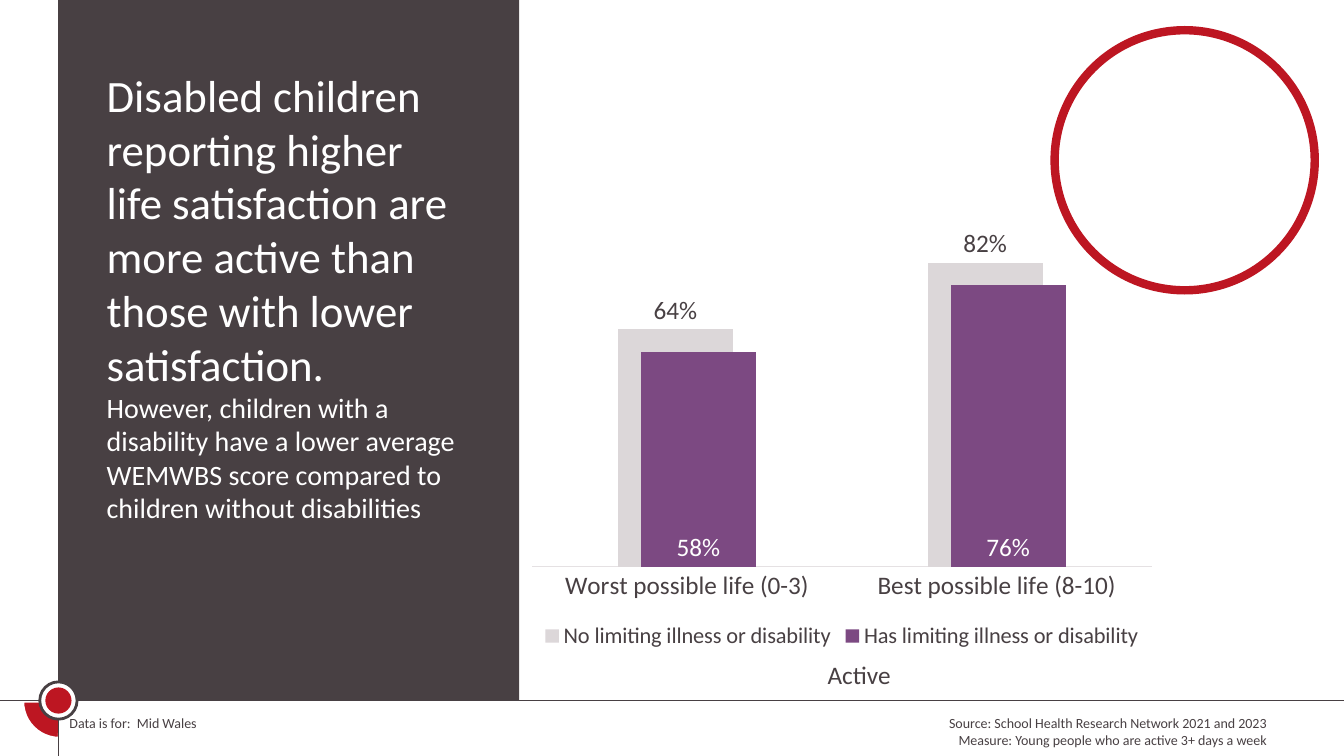
from lxml import etree
from pptx import Presentation
from pptx.chart.data import CategoryChartData
from pptx.dml.color import RGBColor
from pptx.enum.chart import XL_CHART_TYPE, XL_LABEL_POSITION, XL_LEGEND_POSITION, XL_TICK_MARK
from pptx.enum.shapes import MSO_CONNECTOR, MSO_SHAPE
from pptx.enum.text import MSO_AUTO_SIZE, PP_ALIGN
from pptx.oxml.ns import qn
from pptx.util import Inches, Pt

WIDE, HIGH = 13.33, 7.5
EDGE, BASE = 0.58, 6.95  # where the two frame lines cross
FONT = "Calibri"
COLORS = {"dark": "484043", "red": "BD1622", "white": "FFFFFF",
          "grey": "DCD7D9", "plum": "7C4982", "axis": "E5E1E3"}
LEFT, RIGHT = PP_ALIGN.LEFT, PP_ALIGN.RIGHT
OVAL, RECT, PIE = MSO_SHAPE.OVAL, MSO_SHAPE.RECTANGLE, MSO_SHAPE.PIE
OUTER, INNER = XL_LABEL_POSITION.OUTSIDE_END, XL_LABEL_POSITION.INSIDE_BASE


def rgb(name):
    return RGBColor.from_string(COLORS[name])


def inches(box):
    return [Inches(v) for v in box]


def style(font, size, color="dark"):
    font.name, font.size = FONT, Pt(size)
    font.color.rgb = rgb(color)


def add_text(slide, box, *lines, color="dark", align=LEFT):
    """Write each (text, size) pair as a paragraph."""
    frame = slide.shapes.add_textbox(*inches(box)).text_frame
    frame.word_wrap = True
    frame.auto_size = MSO_AUTO_SIZE.SHAPE_TO_FIT_TEXT
    for i, (text, size) in enumerate(lines):
        para = frame.add_paragraph() if i else frame.paragraphs[0]
        para.alignment = align
        run = para.add_run()
        run.text = text
        style(run.font, size, color)


def add_form(slide, kind, box, fill, line=None, width=0):
    form = slide.shapes.add_shape(kind, *inches(box))
    form.shadow.inherit = False
    form.fill.solid()
    form.fill.fore_color.rgb = rgb(fill)
    if line:
        form.line.color.rgb = rgb(line)
        form.line.width = Pt(width)
    else:
        form.line.fill.background()
    return form


def add_disc(slide, x, y, size, fill, line=None, width=0):
    """Draw a circle centred on x, y."""
    box = (x - size / 2, y - size / 2, size, size)
    add_form(slide, OVAL, box, fill, line, width)


def add_line(slide, *ends):
    line = slide.shapes.add_connector(MSO_CONNECTOR.STRAIGHT, *inches(ends))
    line.line.color.rgb = rgb("dark")
    line.line.width = Pt(1)
    etree.SubElement(line._element.spPr, qn("a:effectLst"))


def add_frame(slide, x, y):
    """Draw the lines that cross at x, y and the badge on top of them."""
    add_line(slide, x, 0, x, HIGH)
    add_line(slide, 0, y, WIDE, y)
    add_disc(slide, x, y, 0.37, "white", "dark", 2)
    add_disc(slide, x, y, 0.26, "red")


def add_wedge(slide, box):
    wedge = add_form(slide, PIE, box, "red", "white", 1.5)
    wedge.adjustments[0] = 108.45
    wedge.adjustments[1] = 162
    wedge.rotation = 270


def add_story(slide, box):
    x, y, w, _ = box
    add_text(slide, (x + 0.38, y + 0.62, w - 0.87, 4.68),
             ("Disabled children reporting higher life satisfaction are more "
              "active than those with lower satisfaction.", 32),
             ("However, children with a disability have a lower average WEMWBS "
              "score compared to children without disabilities", 20),
             color="white")


def add_bars(slide, box):
    x, y, w, h = box
    add_text(slide, (x + 2.96, y + h, 1.22, 0.4), ("Active", 18))
    data = CategoryChartData(number_format="0%")
    data.categories = ["Worst possible life (0-3)", "Best possible life (8-10)"]
    data.add_series("No limiting illness or disability", (0.64, 0.82))
    data.add_series("Has limiting illness or disability", (0.58, 0.76))
    chart = slide.shapes.add_chart(
        XL_CHART_TYPE.COLUMN_CLUSTERED, *inches(box), data).chart
    chart.has_title = False
    style(chart.font, 18)

    chart.has_legend = True
    chart.legend.position = XL_LEGEND_POSITION.BOTTOM
    chart.legend.include_in_layout = False
    style(chart.legend.font, 16)

    cats, vals = chart.category_axis, chart.value_axis
    cats.major_tick_mark = cats.minor_tick_mark = XL_TICK_MARK.NONE
    cats.format.line.color.rgb = rgb("axis")
    cats.format.line.width = Pt(0.75)
    style(cats.tick_labels.font, 18)
    vals.minimum_scale, vals.maximum_scale = 0, 1
    vals.has_major_gridlines = False
    vals.visible = False

    plot = chart.plots[0]
    plot.gap_width, plot.overlap = 150, 80
    plot.vary_by_categories = False
    looks = (("grey", "dark", OUTER), ("plum", "white", INNER))
    for series, (fill, ink, place) in zip(plot.series, looks):
        series.format.fill.solid()
        series.format.fill.fore_color.rgb = rgb(fill)
        labels = series.data_labels
        labels.show_value = True
        labels.number_format, labels.number_format_is_linked = "0%", False
        labels.position = place
        style(labels.font, 18, ink)


def add_notes(slide, y):
    """Write the data area and the source under the base line."""
    add_text(slide, (0.59, y, 4.39, 0.27), ("Data is for:  Mid Wales", 10))
    add_text(slide, (6.19, y, 6.47, 0.44),
             ("Source: School Health Research Network 2021 and 2023", 10),
             ("Measure: Young people who are active 3+ days a week", 10),
             align=RIGHT)


def main():
    deck = Presentation()
    deck.slide_width, deck.slide_height = Inches(WIDE), Inches(HIGH)
    slide = deck.slides.add_slide(deck.slide_layouts[6])
    panel = (EDGE, 0, 4.57, BASE)
    add_wedge(slide, (0.23, 6.6, 0.72, 0.72))
    add_form(slide, RECT, panel, "dark")
    add_frame(slide, EDGE, BASE)
    add_disc(slide, 11.75, 1.59, 2.58, "white", "red", 6)
    add_notes(slide, BASE + 0.09)
    add_story(slide, panel)
    add_bars(slide, (5.15, 1.85, 6.4, 4.64))
    deck.save("out.pptx")


if __name__ == "__main__":
    main()
